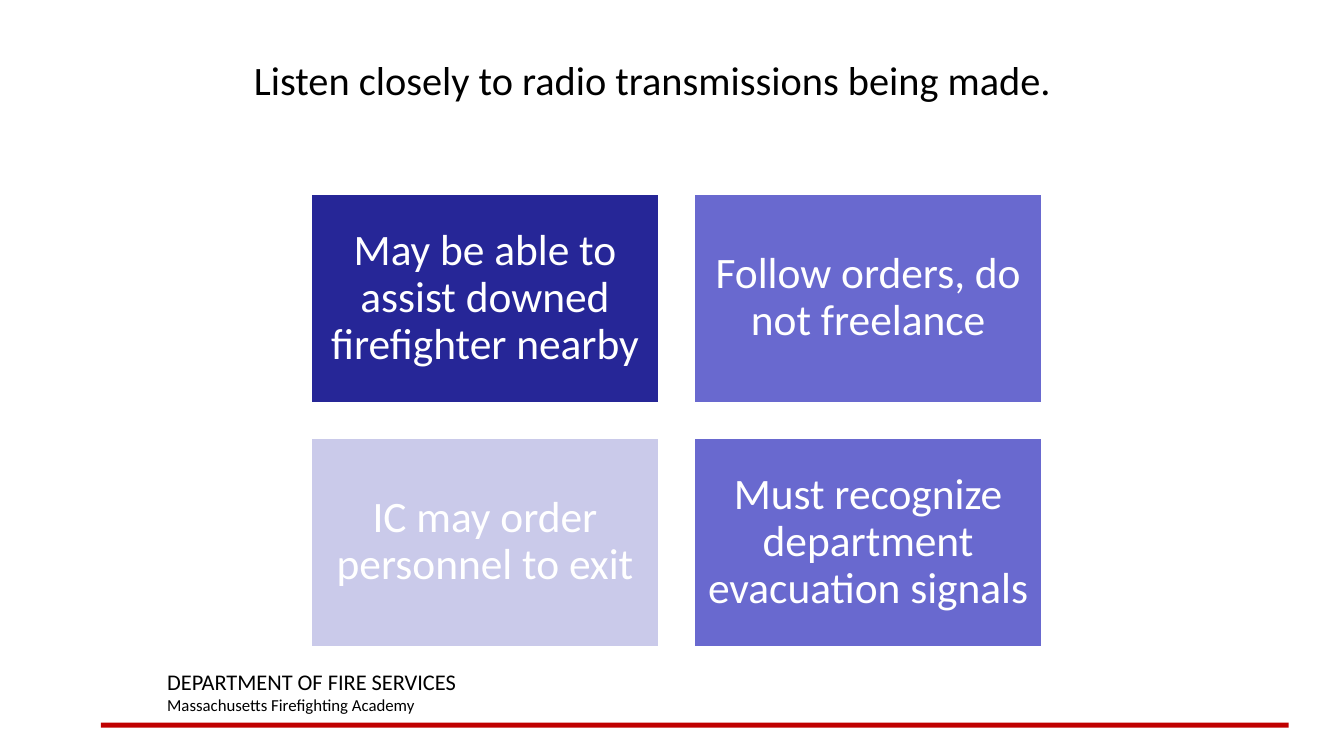
from pptx import Presentation
from pptx.dml.color import RGBColor
from pptx.enum.shapes import MSO_SHAPE
from pptx.enum.text import MSO_ANCHOR, PP_ALIGN
from pptx.util import Inches, Pt

RECT = MSO_SHAPE.RECTANGLE
TOP, MIDDLE = MSO_ANCHOR.TOP, MSO_ANCHOR.MIDDLE
LEFT, CENTER = PP_ALIGN.LEFT, PP_ALIGN.CENTER

WHITE, BLACK, RED = "FFFFFF", "000000", "C00000"
NAVY, VIOLET, PALE = "262697", "6969CF", "CACAEA"


def color(code):
    return RGBColor.from_string(code)


class Board:
    font = "Calibri"

    def __init__(self, slide):
        self.slide = slide

    def style(self, frame, lines, ink, align=LEFT, anchor=TOP):
        """Fill a frame with (text, size) lines."""
        frame.word_wrap = True
        frame.vertical_anchor = anchor
        frame.text = "\n".join(text for text, size in lines)
        for para, (text, size) in zip(frame.paragraphs, lines):
            para.alignment = align
            para.font.name = self.font
            para.font.size = Pt(size)
            para.font.color.rgb = color(ink)

    def label(self, box, lines):
        shape = self.slide.shapes.add_textbox(*map(Inches, box))
        self.style(shape.text_frame, lines, BLACK)

    def block(self, box, fill):
        shape = self.slide.shapes.add_shape(RECT, *map(Inches, box))
        shape.shadow.inherit = False
        shape.fill.solid()
        shape.fill.fore_color.rgb = color(fill)
        shape.line.fill.background()
        return shape

    def card(self, box, fill, text):
        shape = self.block(box, fill)
        shape.line.color.rgb = color(WHITE)
        shape.line.width = Pt(2)
        frame = shape.text_frame
        frame.margin_left = frame.margin_right = Inches(0.13)
        frame.margin_top = frame.margin_bottom = Inches(0.13)
        self.style(frame, [(text, 31)], WHITE, CENTER, MIDDLE)
        frame.paragraphs[0].line_spacing = 0.9


def main():
    deck = Presentation()
    deck.slide_width, deck.slide_height = Inches(13.33), Inches(7.5)
    board = Board(deck.slides.add_slide(deck.slide_layouts[6]))

    # Footer
    board.block((1, 7.17, 11.78, 0.05), RED)
    board.label((1.56, 6.58, 5.67, 0.57), [
        ("DEPARTMENT OF FIRE SERVICES", 16),
        ("Massachusetts Firefighting Academy", 12),
    ])

    # Two by two cards
    wide, high = 3.46, 2.08
    cards = [
        (NAVY, "May be able to assist downed firefighter nearby"),
        (VIOLET, "Follow orders, do not freelance"),
        (PALE, "IC may order personnel to exit"),
        (VIOLET, "Must recognize department evacuation signals"),
    ]
    for index, (fill, text) in enumerate(cards):
        row, col = divmod(index, 2)
        box = (3.08 + col * 3.8, 1.92 + row * 2.42, wide, high)
        board.card(box, fill, text)

    # Title
    board.label((2.42, 0.5, 8.5, 1),
                [("Listen closely to radio transmissions being made.", 28.8)])

    deck.save("out.pptx")


if __name__ == "__main__":
    main()
